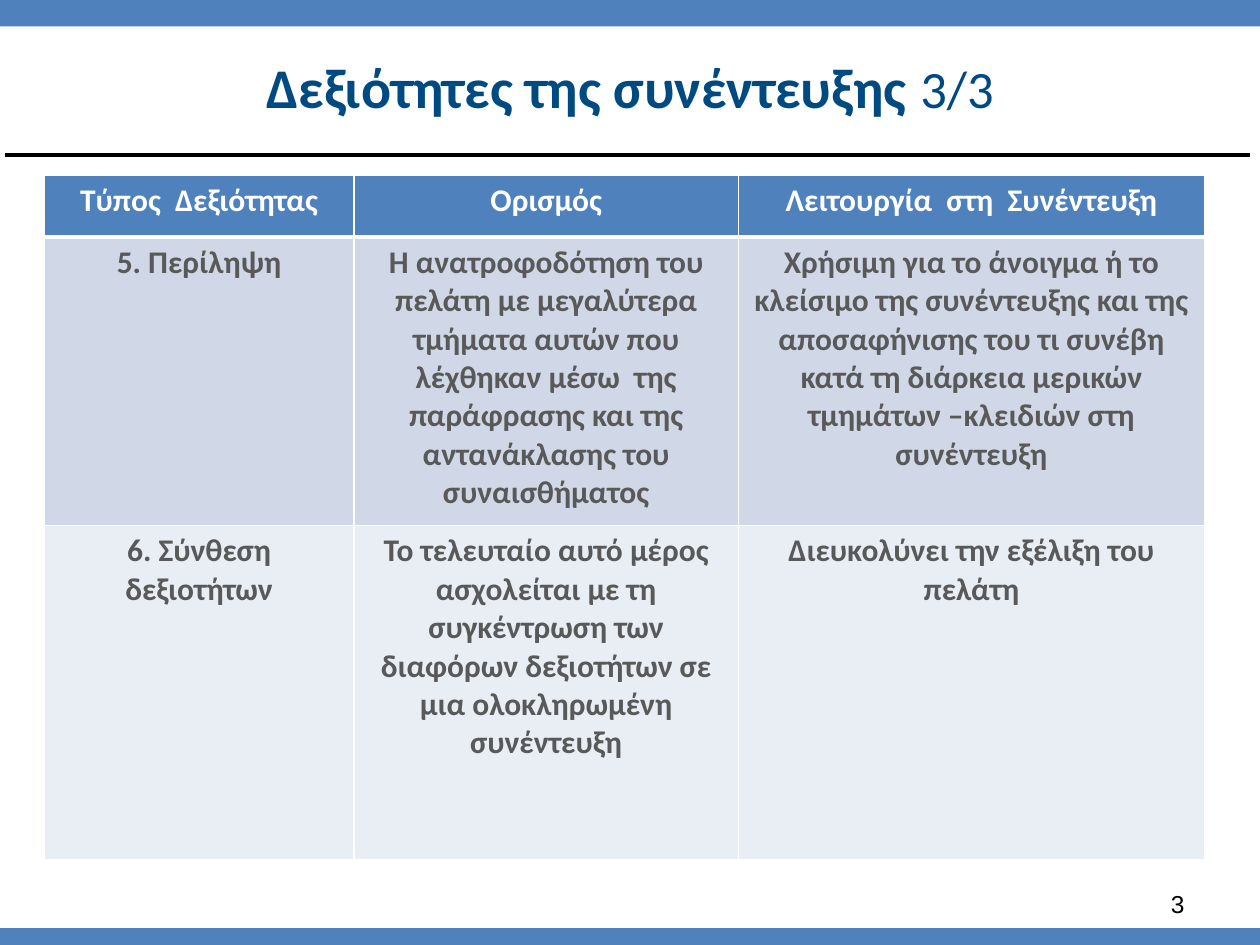
import pptx
import pptx.dml.color
import pptx.enum.shapes
import pptx.enum.text
import pptx.oxml.ns
import pptx.util
from lxml import etree
from pptx.util import Inches

COLORS = {
    "bar": "4F81BD",
    "title": "004A82",
    "white": "FFFFFF",
    "black": "000000",
    "body": "595959",
    "band_dark": "D0D8E8",
    "band_light": "E9EDF4",
}
ALIGN = pptx.enum.text.PP_ALIGN
ANCHOR = pptx.enum.text.MSO_ANCHOR

COLUMN_WIDTHS = [2.46, 3.05, 3.7]
ROW_HEIGHTS = [0.49, 2.29, 2.65]
ROW_FILLS = ["bar", "band_dark", "band_light"]
SKILLS = [
    ["Τύπος  Δεξιότητας", "Ορισμός", "Λειτουργία  στη  Συνέντευξη"],
    [
        "5. Περίληψη",
        "Η ανατροφοδότηση του πελάτη με μεγαλύτερα τμήματα αυτών που λέχθηκαν "
        "μέσω  της παράφρασης και της αντανάκλασης του συναισθήματος",
        "Χρήσιμη για το άνοιγμα ή το κλείσιμο της συνέντευξης και της "
        "αποσαφήνισης του τι συνέβη κατά τη διάρκεια μερικών τμημάτων "
        "–κλειδιών στη συνέντευξη",
    ],
    [
        "6. Σύνθεση δεξιοτήτων",
        "Το τελευταίο αυτό μέρος ασχολείται με τη συγκέντρωση των διαφόρων "
        "δεξιοτήτων σε μια ολοκληρωμένη συνέντευξη",
        "Διευκολύνει την εξέλιξη του πελάτη",
    ],
]


def rgb(name):
    return pptx.dml.color.RGBColor.from_string(COLORS[name])


def fill_solid(target, color):
    target.fill.solid()
    target.fill.fore_color.rgb = rgb(color)


def add_run(paragraph, text, size, color, bold=False, font="Calibri"):
    run = paragraph.add_run()
    run.text = text
    run.font.name = font
    run.font.size = pptx.util.Pt(size)
    run.font.bold = bold
    run.font.color.rgb = rgb(color)


def add_bar(slide, left, top, width, height):
    bar = slide.shapes.add_shape(
        pptx.enum.shapes.MSO_SHAPE.RECTANGLE,
        Inches(left), Inches(top), Inches(width), Inches(height))
    bar.shadow.inherit = False
    fill_solid(bar, "bar")
    bar.line.color.rgb = rgb("bar")
    bar.line.width = pptx.util.Pt(0.75)


def add_rule(slide, left, top, width):
    rule = slide.shapes.add_connector(
        pptx.enum.shapes.MSO_CONNECTOR.STRAIGHT,
        Inches(left), Inches(top), Inches(left + width), Inches(top))
    rule.line.color.rgb = rgb("black")
    rule.line.width = pptx.util.Pt(2.25)
    properties = rule._element.spPr
    etree.SubElement(properties, pptx.oxml.ns.qn("a:effectLst"))


def place_title(slide, left, top, width, height):
    title = slide.shapes.title
    title.left, title.top = Inches(left), Inches(top)
    title.width, title.height = Inches(width), Inches(height)
    fill_solid(title, "white")
    frame = title.text_frame
    frame.auto_size = pptx.enum.text.MSO_AUTO_SIZE.NONE
    frame.vertical_anchor = ANCHOR.MIDDLE
    paragraph = frame.paragraphs[0]
    paragraph.alignment = ALIGN.CENTER
    add_run(paragraph, "Δεξιότητες της συνέντευξης ", 32, "title", bold=True)
    add_run(paragraph, "3/3", 30, "title")
    slide.shapes._spTree.append(title._element)


def set_borders(cell, widths):
    properties = cell._tc.get_or_add_tcPr()
    for position, (side, width) in enumerate(widths.items()):
        line = etree.Element(
            pptx.oxml.ns.qn(f"a:ln{side}"), w=str(pptx.util.Pt(width)))
        fill = etree.SubElement(line, pptx.oxml.ns.qn("a:solidFill"))
        etree.SubElement(
            fill, pptx.oxml.ns.qn("a:srgbClr"), val=COLORS["white"])
        properties.insert(position, line)


def add_skills_table(slide, left, top):
    table = slide.shapes.add_table(
        len(ROW_HEIGHTS), len(COLUMN_WIDTHS), Inches(left), Inches(top),
        Inches(sum(COLUMN_WIDTHS)), Inches(sum(ROW_HEIGHTS))).table
    for column, width in zip(table.columns, COLUMN_WIDTHS):
        column.width = Inches(width)
    for row_index, (row, height) in enumerate(zip(table.rows, ROW_HEIGHTS)):
        row.height = Inches(height)
        header = row_index == 0
        borders = {
            "L": 1,
            "R": 1,
            "T": 3 if row_index == 1 else 1,
            "B": 3 if header else 1,
        }
        for cell, text in zip(row.cells, SKILLS[row_index]):
            fill_solid(cell, ROW_FILLS[row_index])
            set_borders(cell, borders)
            paragraph = cell.text_frame.paragraphs[0]
            paragraph.alignment = ALIGN.CENTER
            add_run(paragraph, text, 18, "white" if header else "body", bold=True)


def add_page_number(slide, left, top, width, height):
    box = slide.shapes.add_textbox(
        Inches(left), Inches(top), Inches(width), Inches(height))
    frame = box.text_frame
    frame.word_wrap = True
    frame.vertical_anchor = ANCHOR.TOP
    paragraph = frame.paragraphs[0]
    paragraph.alignment = ALIGN.RIGHT
    add_run(paragraph, "3", 14, "black", font="Arial")


def main():
    presentation = pptx.Presentation()
    presentation.slide_width = Inches(10)
    presentation.slide_height = Inches(7.5)
    slide = presentation.slides.add_slide(presentation.slide_layouts[5])
    add_rule(slide, 0.04, 1.23, 9.88)
    add_bar(slide, 0, -0.03, 10, 0.32)
    add_bar(slide, -0.04, 7.37, 10.04, 0.13)
    place_title(slide, 0, 0.21, 10, 0.94)
    add_skills_table(slide, 0.35, 1.39)
    add_page_number(slide, 7.17, 7.01, 2.33, 0.28)
    presentation.save("out.pptx")


if __name__ == "__main__":
    main()
